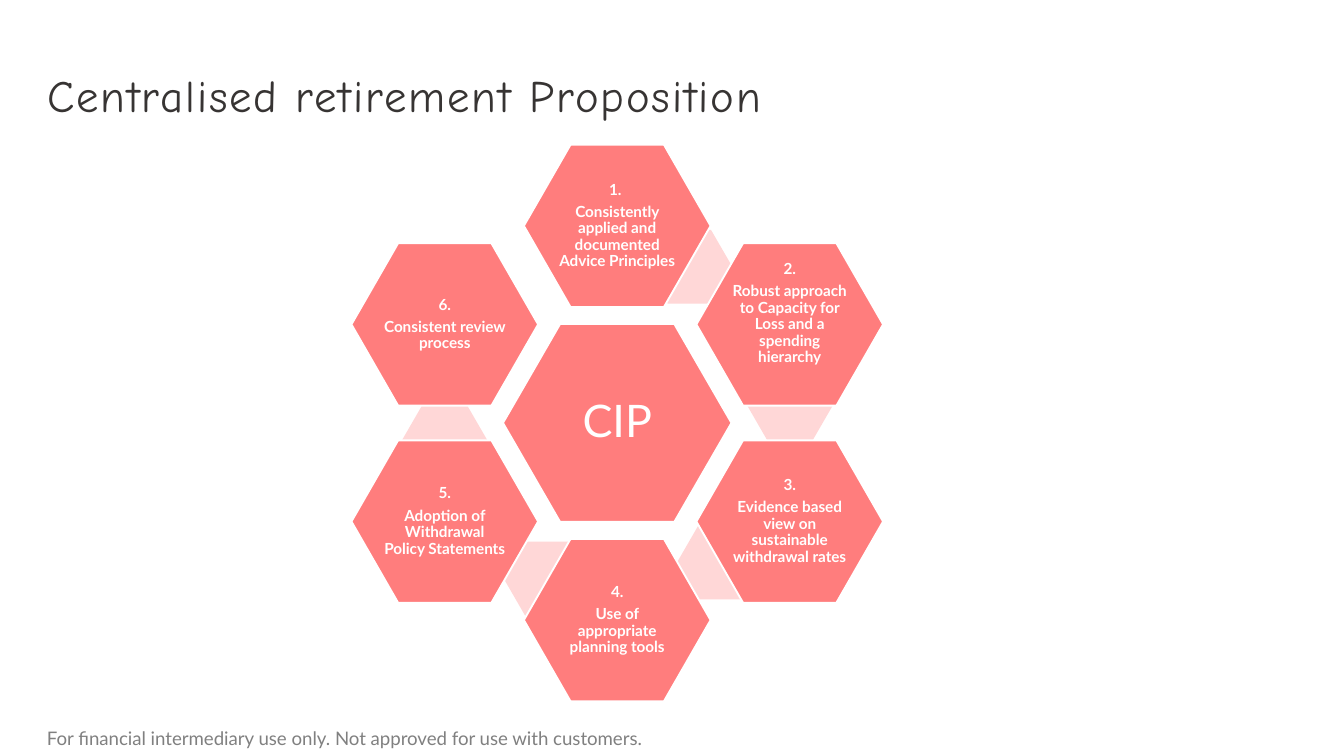
"""Build the Centralised retirement Proposition slide."""
from dataclasses import dataclass

import pptx
import pptx.dml.color
import pptx.enum.shapes
import pptx.enum.text
import pptx.shapes.autoshape
import pptx.slide
import pptx.text.text
import pptx.util

Pt = pptx.util.Pt
RGBColor = pptx.dml.color.RGBColor
Anchor = pptx.enum.text.MSO_ANCHOR
Align = pptx.enum.text.PP_ALIGN

CORAL = RGBColor(0xFF, 0x7D, 0x7D)
PINK = RGBColor(0xFF, 0xD7, 0xD7)
WHITE = RGBColor(0xFF, 0xFF, 0xFF)
DARK = RGBColor(0x37, 0x34, 0x33)
GREY = RGBColor(0x80, 0x80, 0x80)

HUB_X, HUB_Y = 330.7, 226.6
STEP_X, STEP_Y = 92.4, 52.8
HUB_SIZE = (122.4, 106)
PETAL_SIZE = (100, 87)
LINK_W, LINK_H = 46, 39.6


@dataclass
class Petal:
    """One outer hexagon, in grid steps from the hub, and its link offset."""
    col: int
    row: int
    number: str
    text: str
    link: tuple[float, float] | None = None
    lift: float = 0


PETALS = [
    Petal(0, -2, "1. ", "Consistently applied and documented Advice Principles", (38.6, -83.7)),
    Petal(1, -1, "2.", "Robust approach to Capacity for Loss and a spending hierarchy",
          (92.5, -9.5), lift=11.5),
    Petal(1, 1, "3.", "Evidence based view on sustainable withdrawal rates", (55, 74.7)),
    Petal(0, 2, "4.", "Use of appropriate planning tools", (-37.8, 83.4)),
    Petal(-1, 1, "5.", "Adoption of Withdrawal Policy Statements", (-92.5, 9.5)),
    Petal(-1, -1, "6.", "Consistent review process"),
]


def format_frame(tf: pptx.text.text.TextFrame, anchor: Anchor,
                 insets: tuple[float, float, float, float]) -> None:
    """Set wrapping, anchor and left, top, right and bottom insets."""
    tf.word_wrap = True
    tf.auto_size = pptx.enum.text.MSO_AUTO_SIZE.NONE
    tf.vertical_anchor = anchor
    tf.margin_left, tf.margin_top, tf.margin_right, tf.margin_bottom = map(Pt, insets)


def format_font(p, name: str, size: float, color: RGBColor, bold: bool = False) -> None:
    """Set the font of a whole paragraph."""
    p.font.name = name
    p.font.size = Pt(size)
    p.font.color.rgb = color
    p.font.bold = bold


def add_hexagon(s: pptx.slide.Slide, x: float, y: float, size: tuple[float, float],
                lines: list[str], font_size: float, bold: bool,
                insets: tuple[float, float, float, float]) -> None:
    """Draw a labelled hexagon centred on x, y."""
    w, h = size
    outline = [(-w / 2, 0), (-w / 4, -h / 2), (w / 4, -h / 2),
               (w / 2, 0), (w / 4, h / 2), (-w / 4, h / 2)]
    points = [(Pt(x + dx), Pt(y + dy)) for dx, dy in outline]
    builder = s.shapes.build_freeform(*points[0])
    builder.add_line_segments(points[1:], close=True)
    sp = builder.convert_to_shape()
    sp.shadow.inherit = False
    sp.fill.solid()
    sp.fill.fore_color.rgb = CORAL
    sp.line.color.rgb = WHITE
    sp.line.width = Pt(1)
    tf = sp.text_frame
    format_frame(tf, Anchor.MIDDLE, insets)
    for i, line in enumerate(lines):
        p = tf.add_paragraph() if i else tf.paragraphs[0]
        p.text = line
        p.alignment = Align.CENTER
        p.line_spacing = 0.9
        p.space_after = Pt(3)
        format_font(p, "Lato", font_size, WHITE, bold)


def add_link(s: pptx.slide.Slide, x: float, y: float) -> None:
    """Draw a pale hexagon centred on x, y."""
    sp = s.shapes.add_shape(pptx.enum.shapes.MSO_SHAPE.HEXAGON, Pt(x - LINK_W / 2),
                            Pt(y - LINK_H / 2), Pt(LINK_W), Pt(LINK_H))
    sp.adjustments[0] = 0.289
    sp.adjustments[1] = 1.155
    sp.shadow.inherit = False
    sp.fill.solid()
    sp.fill.fore_color.rgb = PINK
    sp.line.fill.background()


def add_title(s: pptx.slide.Slide) -> None:
    """Place and format the title."""
    sp = s.shapes.title
    sp.left, sp.top, sp.width, sp.height = Pt(22.3), Pt(0), Pt(643.7), Pt(65.5)
    tf = sp.text_frame
    format_frame(tf, Anchor.BOTTOM, (2.9, 1.4, 2.9, 1.4))
    p = tf.paragraphs[0]
    p.text = "Centralised retirement Proposition"
    p.alignment = Align.LEFT
    p.line_spacing = 0.7
    format_font(p, "Comic Neue", 24, DARK)
    p.runs[0]._r.get_or_add_rPr().set("spc", "100")


def add_disclaimer(s: pptx.slide.Slide) -> None:
    """Write the line at the foot of the slide."""
    sp = s.shapes.add_textbox(Pt(22.3), Pt(388), Pt(493), Pt(14.4))
    tf = sp.text_frame
    format_frame(tf, Anchor.MIDDLE, (2.9, 3.6, 7.2, 3.6))
    p = tf.paragraphs[0]
    p.text = "For financial intermediary use only. Not approved for use with customers."
    format_font(p, "Lato", 10, GREY)


def main() -> None:
    """Assemble and save the slide."""
    prs = pptx.Presentation()
    prs.slide_width, prs.slide_height = Pt(720), Pt(405)
    s = prs.slides.add_slide(prs.slide_layouts[5])
    add_disclaimer(s)
    add_title(s)
    add_hexagon(s, HUB_X, HUB_Y, HUB_SIZE, ["CIP"], 24, False, (23, 20, 23, 20))
    for petal in PETALS:
        if petal.link:
            add_link(s, HUB_X + petal.link[0], HUB_Y + petal.link[1])
        add_hexagon(s, HUB_X + petal.col * STEP_X, HUB_Y + petal.row * STEP_Y, PETAL_SIZE,
                    [petal.number, petal.text], 8.2, True, (17, 15, 17, 15 + petal.lift))
    prs.save("out.pptx")


if __name__ == "__main__":
    main()
